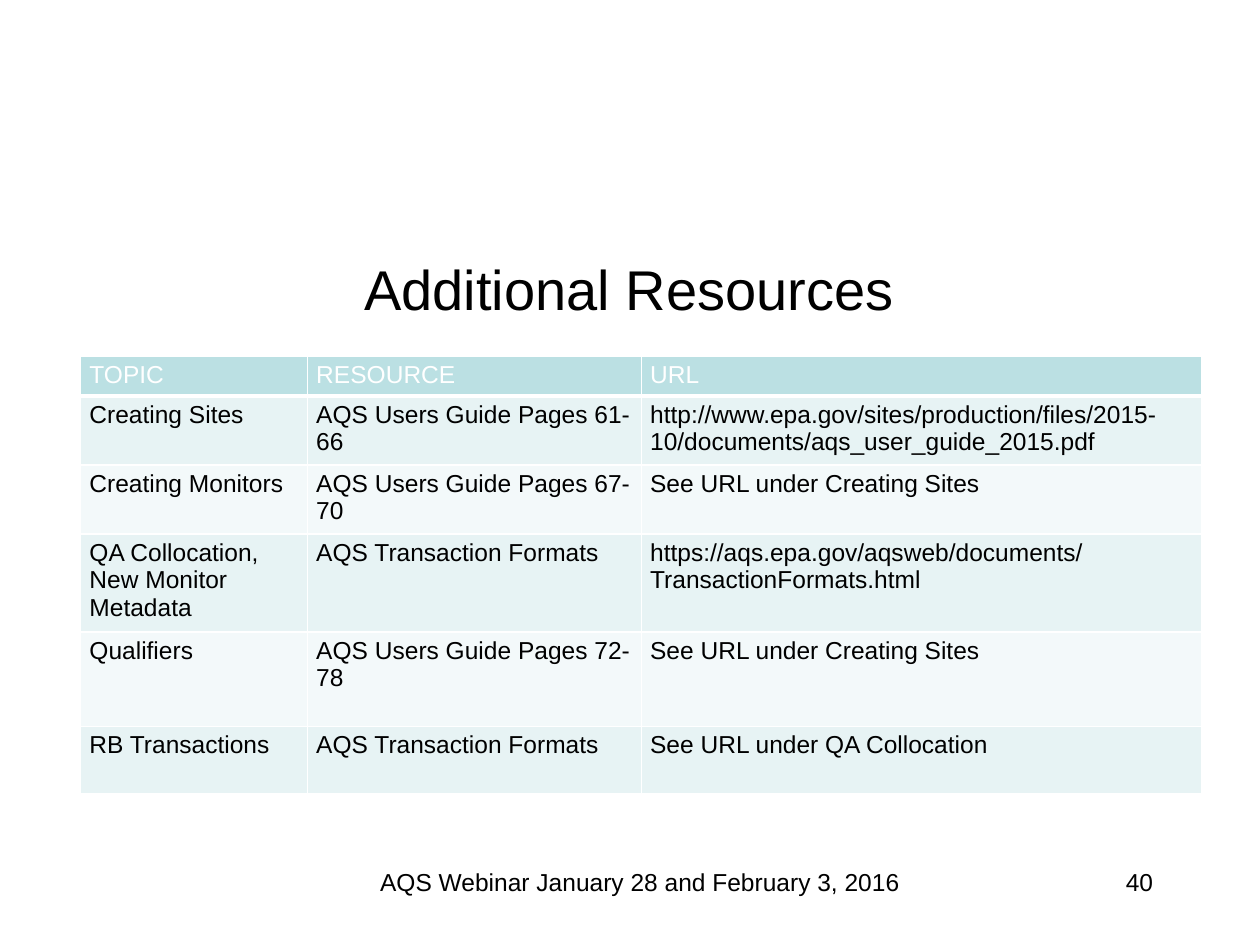
from lxml.etree import SubElement
from pptx import Presentation
from pptx.dml.color import RGBColor
from pptx.enum.text import MSO_ANCHOR, PP_ALIGN
from pptx.oxml.ns import qn
from pptx.util import Inches, Pt

BLACK = RGBColor(0x00, 0x00, 0x00)
WHITE = RGBColor(0xFF, 0xFF, 0xFF)
HEADER_TEAL = RGBColor(0xBB, 0xE0, 0xE3)
BAND_DARK = RGBColor(0xE7, 0xF3, 0xF4)
BAND_LIGHT = RGBColor(0xF3, 0xF9, 0xFA)

COLUMN_WIDTHS = [1.8, 2.65, 4.45]
ROW_HEIGHTS = [0.3, 0.53, 0.53, 0.75, 0.75, 0.53]
RESOURCES = [
    ("TOPIC", "RESOURCE", "URL"),
    ("Creating Sites", "AQS Users Guide Pages 61-66",
     "http://www.epa.gov/sites/production/files/2015-10/documents/aqs_user_guide_2015.pdf"),
    ("Creating Monitors", "AQS Users Guide Pages 67-70", "See URL under Creating Sites"),
    ("QA Collocation, New Monitor Metadata", "AQS Transaction Formats",
     "https://aqs.epa.gov/aqsweb/documents/TransactionFormats.html"),
    ("Qualifiers", "AQS Users Guide Pages 72-78", "See URL under Creating Sites"),
    ("RB Transactions", "AQS Transaction Formats", "See URL under QA Collocation"),
]


def write_text(frame, text, size=14, color=BLACK, align=PP_ALIGN.LEFT):
    frame.word_wrap = True
    para = frame.paragraphs[0]
    para.alignment = align
    span = para.add_run()
    span.text = text
    span.font.name = "Arial"
    span.font.size = Pt(size)
    span.font.bold = False
    span.font.color.rgb = color


def add_label(page, area, text, anchor=MSO_ANCHOR.TOP, **text_format):
    box = page.shapes.add_textbox(*map(Inches, area))
    box.text_frame.vertical_anchor = anchor
    write_text(box.text_frame, text, **text_format)


def set_borders(cell, widths):
    """Draw white borders; widths maps a side (L, R, T, B) to points."""
    properties = cell._tc.get_or_add_tcPr()
    for position, (side, width) in enumerate(widths.items()):
        line = SubElement(properties, qn(f"a:ln{side}"), w=str(Pt(width)))
        properties.insert(position, line)
        fill = SubElement(line, qn("a:solidFill"))
        SubElement(fill, qn("a:srgbClr"), val=str(WHITE))


def format_cell(cell, text, row):
    cell.margin_left = cell.margin_right = Inches(0.07)
    cell.margin_top = cell.margin_bottom = Inches(0.04)
    header = row == 0
    cell.fill.solid()
    cell.fill.fore_color.rgb = HEADER_TEAL if header else (BAND_LIGHT, BAND_DARK)[row % 2]
    set_borders(cell, {"L": 1, "R": 1, "T": 3 if row == 1 else 1, "B": 3 if header else 1})
    write_text(cell.text_frame, text, color=WHITE if header else BLACK)


def add_resource_table(page, area):
    table = page.shapes.add_table(len(RESOURCES), len(COLUMN_WIDTHS), *map(Inches, area)).table
    for column, width in zip(table.columns, COLUMN_WIDTHS):
        column.width = Inches(width)
    for row, (height, texts) in enumerate(zip(ROW_HEIGHTS, RESOURCES)):
        table.rows[row].height = Inches(height)
        for column, text in enumerate(texts):
            format_cell(table.cell(row, column), text, row)


def main():
    deck = Presentation()
    deck.slide_width, deck.slide_height = Inches(10), Inches(7.5)
    page = deck.slides.add_slide(deck.slide_layouts[6])
    add_label(page, (0.83, 1.75, 8.33, 1.08), "Additional Resources",
              anchor=MSO_ANCHOR.MIDDLE, size=32, align=PP_ALIGN.CENTER)
    add_resource_table(page, (0.64, 2.83, sum(COLUMN_WIDTHS), sum(ROW_HEIGHTS)))
    add_label(page, (2.08, 6.83, 6, 0.5), "AQS Webinar January 28 and February 3, 2016",
              align=PP_ALIGN.CENTER)
    add_label(page, (7.17, 6.83, 2.08, 0.5), "40", align=PP_ALIGN.RIGHT)
    deck.save("out.pptx")


if __name__ == "__main__":
    main()
